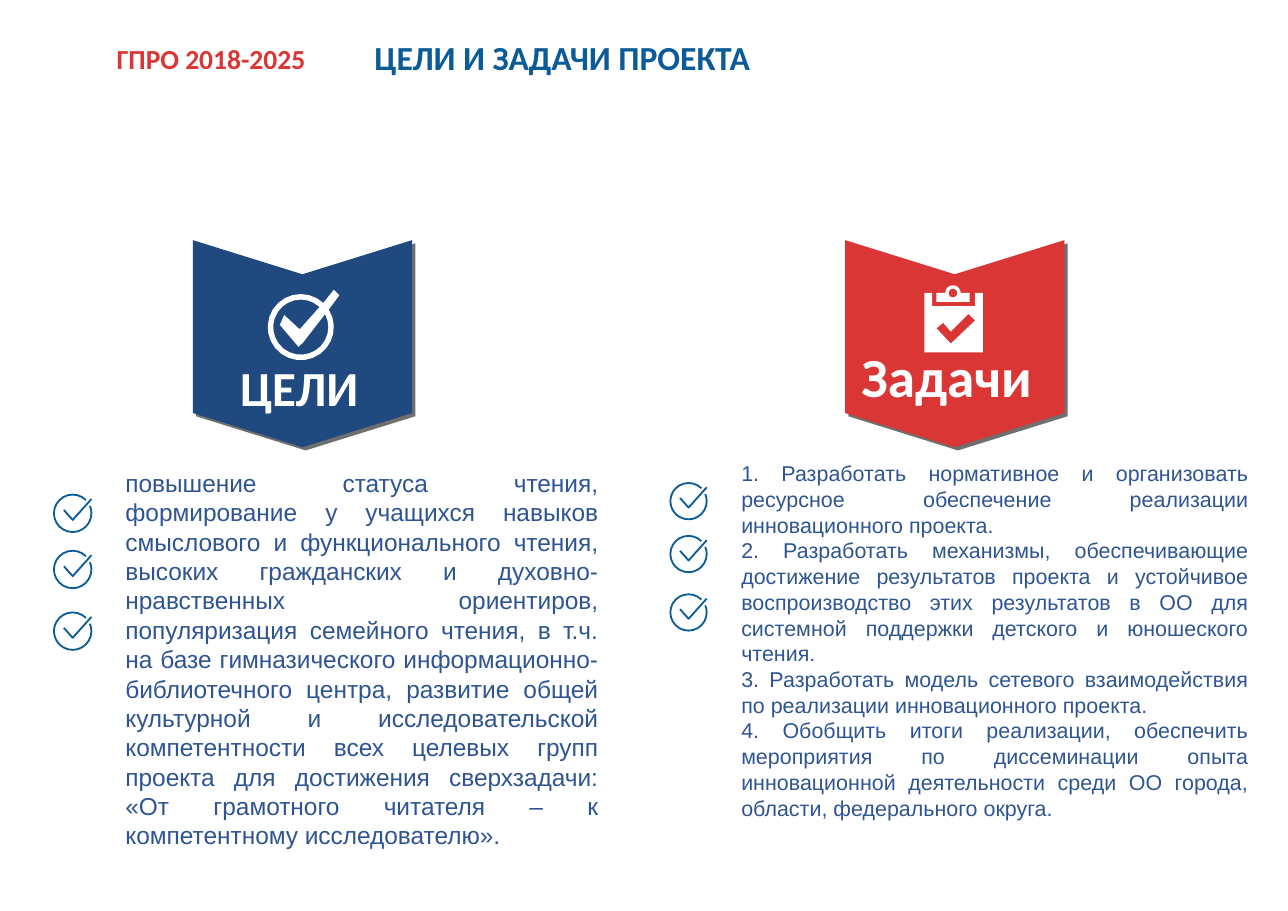
from math import cos, radians, sin

from lxml import etree
from pptx import Presentation
from pptx.dml.color import RGBColor
from pptx.enum.shapes import MSO_SHAPE
from pptx.enum.text import MSO_ANCHOR, PP_ALIGN
from pptx.oxml.ns import qn
from pptx.util import Inches, Pt

RED = RGBColor(0xD9, 0x36, 0x35)
NAVY = RGBColor(0x20, 0x49, 0x7F)
BLUE = RGBColor(0x0B, 0x5B, 0x97)
BODY_BLUE = RGBColor(0x2E, 0x55, 0x92)
WHITE = RGBColor(0xFF, 0xFF, 0xFF)

GOAL = (
    "повышение статуса чтения, формирование у учащихся навыков смыслового и "
    "функционального чтения, высоких гражданских и духовно-нравственных "
    "ориентиров, популяризация семейного чтения, в т.ч. на базе гимназического "
    "информационно-библиотечного центра, развитие общей культурной и "
    "исследовательской компетентности всех целевых групп проекта для достижения "
    "сверхзадачи: «От грамотного читателя – к компетентному исследователю»."
)
TASKS = (
    "1. Разработать нормативное и организовать ресурсное обеспечение реализации "
    "инновационного проекта.",
    "2. Разработать механизмы, обеспечивающие достижение результатов проекта и "
    "устойчивое воспроизводство этих результатов в ОО для системной поддержки "
    "детского и юношеского чтения.",
    "3. Разработать модель сетевого взаимодействия по реализации инновационного "
    "проекта.",
    "4. Обобщить итоги реализации, обеспечить мероприятия по диссеминации опыта "
    "инновационной деятельности среди ОО города, области, федерального округа.",
)


def add_text(slide, box, paragraphs, *, size, color, font="Calibri", bold=False,
             align=PP_ALIGN.LEFT, anchor=MSO_ANCHOR.TOP, wrap=True, indent=0):
    """Add a text box holding the given paragraphs in one format."""
    frame = slide.shapes.add_textbox(*map(Inches, box)).text_frame
    frame.word_wrap = wrap
    frame.vertical_anchor = anchor
    frame.text = "\n".join(paragraphs)
    for paragraph in frame.paragraphs:
        paragraph.alignment = align
        if indent:
            paragraph._p.get_or_add_pPr().set("marL", str(Inches(indent)))
        for run in paragraph.runs:
            run.font.name = font
            run.font.size = Pt(size)
            run.font.bold = bold
            run.font.color.rgb = color


def arc(x, y, radius, start=0, end=360, steps=24):
    """Return points along an arc, with angles clockwise from the right."""
    angles = [radians(start + (end - start) * i / steps) for i in range(steps + 1)]
    return [(x + radius * cos(a), y + radius * sin(a)) for a in angles]


def draw_contours(slide, contours, close=True):
    """Return one freeform that follows the given contours."""
    builder = None
    for contour in contours:
        first, *rest = [(Inches(x), Inches(y)) for x, y in contour]
        if builder is None:
            builder = slide.shapes.build_freeform(*first)
        else:
            builder.move_to(*first)
        builder.add_line_segments(rest, close=close)
    return builder.convert_to_shape()


def add_solid(slide, color, *contours):
    """Add one filled shape made of closed contours."""
    shape = draw_contours(slide, contours)
    shape.shadow.inherit = False
    shape.fill.solid()
    shape.fill.fore_color.rgb = color
    shape.line.fill.background()
    return shape


def add_badge(slide, left, color):
    """Add a notched ribbon with a hard shadow to the lower right."""
    top, width, side, notch = 2.18, 1.99, 1.57, 0.31
    middle, right, bottom = left + width / 2, left + width, top + side
    badge = add_solid(slide, color, [
        (left, top), (middle, top + notch), (right, top),
        (right, bottom), (middle, bottom + notch), (left, bottom),
    ])
    effects = badge._element.spPr.find(qn("a:effectLst"))
    shadow = etree.SubElement(effects, qn("a:outerShdw"), dist=str(Pt(3)),
                              dir="2700000", algn="tl", rotWithShape="0")
    tint = etree.SubElement(shadow, qn("a:srgbClr"), val="3F3F3F")
    etree.SubElement(tint, qn("a:alpha"), val="75000")


def add_check(slide, x, y, scale=1.0):
    """Add a thin open ring with a tick, centred on x, y."""
    radius = 0.17 * scale
    ring = slide.shapes.add_shape(
        MSO_SHAPE.ARC, Inches(x - radius), Inches(y - radius),
        Inches(2 * radius), Inches(2 * radius))
    ring.adjustments[0], ring.adjustments[1] = 337 * 0.6, 315 * 0.6
    offsets = [(-0.08, -0.03), (0, 0.06), (0.17, -0.13)]
    tick = draw_contours(
        slide, [[(x + dx * scale, y + dy * scale) for dx, dy in offsets]], False)
    for stroke in (ring, tick):
        stroke.shadow.inherit = False
        stroke.fill.background()
        stroke.line.color.rgb = BLUE
        stroke.line.width = Pt(1.2)


def add_goal_icon(slide):
    """Add the bold ringed tick of the goals badge."""
    x, y = 2.73, 2.97
    outer = [(3.08, 2.68), (3.03, 2.63)] + arc(x, y, 0.3, 313, -32)
    inner = arc(x, y, 0.25, -28, 313) + [
        (2.72, 2.99), (2.58, 2.86), (2.54, 2.95), (2.71, 3.15), (2.75, 3.11)]
    add_solid(slide, WHITE, outer, inner)


def add_task_icon(slide):
    """Add the clipboard of the tasks badge."""
    clip = [(8.5, 2.74), (8.5, 2.66)] + arc(8.65, 2.66, 0.07, 180, 360, 10)
    clip += [(8.8, 2.66), (8.8, 2.74)]
    add_solid(slide, WHITE, clip, arc(8.65, 2.66, 0.04, steps=12))
    board = [(8.85, 2.66), (8.85, 2.78), (8.46, 2.78), (8.46, 2.66),
             (8.39, 2.66), (8.39, 3.2), (8.92, 3.2), (8.92, 2.66)]
    tick = [(8.63, 3.12), (8.5, 2.98), (8.56, 2.93),
            (8.63, 3.01), (8.79, 2.85), (8.85, 2.91)]
    add_solid(slide, WHITE, board, tick)


def main():
    """Build the goals and tasks slide."""
    deck = Presentation()
    deck.slide_width, deck.slide_height = Inches(11.69), Inches(8.27)
    slide = deck.slides.add_slide(deck.slide_layouts[6])

    add_text(slide, (0.96, 0.33, 1.92, 0.4), ["ГПРО 2018-2025"],
             size=18, color=RED, bold=True, wrap=False)
    add_text(slide, (3.3, 0.12, 6.38, 0.79), ["ЦЕЛИ И ЗАДАЧИ ПРОЕКТА"],
             size=22, color=BLUE, bold=True, anchor=MSO_ANCHOR.MIDDLE)

    add_badge(slide, 1.75, NAVY)
    add_goal_icon(slide)
    add_text(slide, (2.08, 3.2, 1.35, 0.64), ["ЦЕЛИ"],
             size=32, color=WHITE, bold=True, wrap=False)
    add_text(slide, (0.99, 4.2, 4.54, 3.06), [GOAL], size=16, color=BODY_BLUE,
             font="Arial", align=PP_ALIGN.JUSTIFY, indent=0.05)
    for y in (4.66, 5.17, 5.73):
        add_check(slide, 0.66, y)

    add_badge(slide, 7.67, RED)
    add_task_icon(slide)
    add_text(slide, (7.72, 3.06, 1.96, 0.71), ["Задачи"],
             size=36, color=WHITE, bold=True, wrap=False)
    add_text(slide, (6.63, 4.13, 4.8, 3.4), TASKS, size=14, color=BODY_BLUE,
             font="Arial", align=PP_ALIGN.JUSTIFY)
    for y in (4.55, 5.03, 5.56):
        add_check(slide, 6.25, y, scale=0.97)

    deck.save("out.pptx")


if __name__ == "__main__":
    main()
